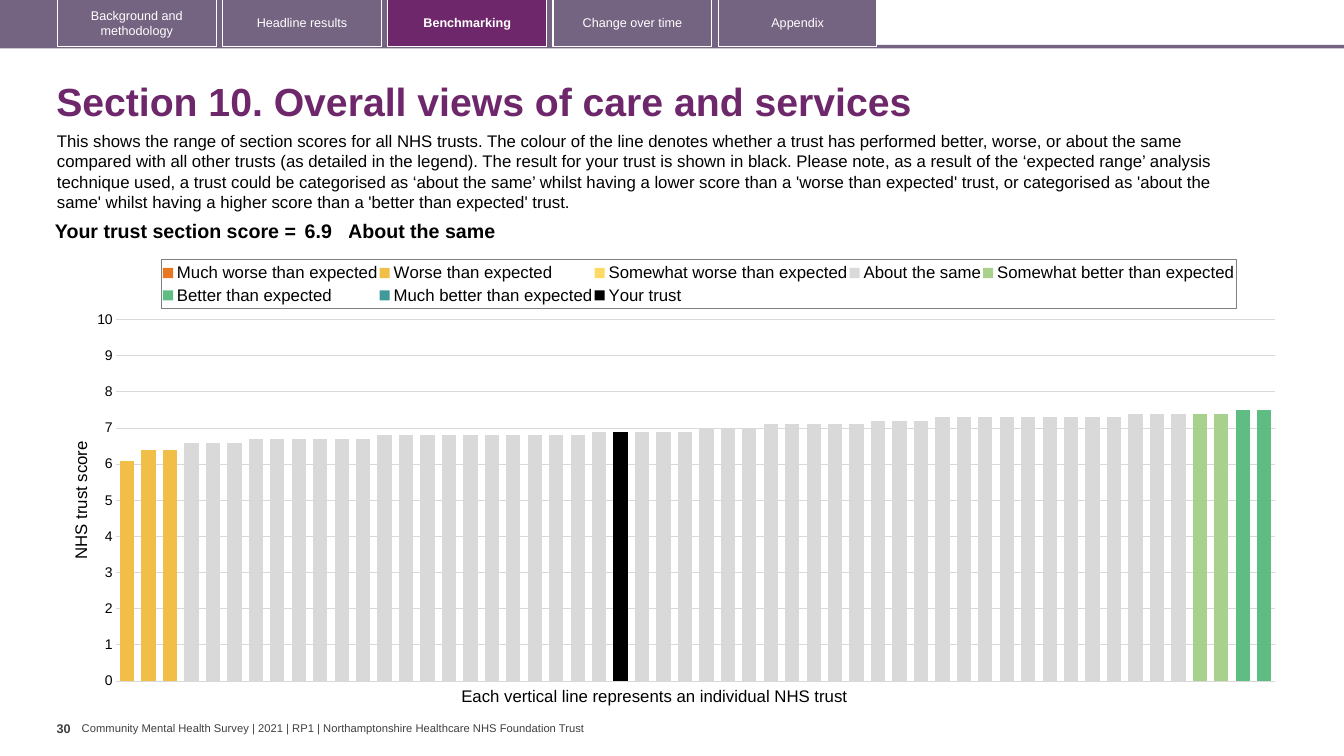
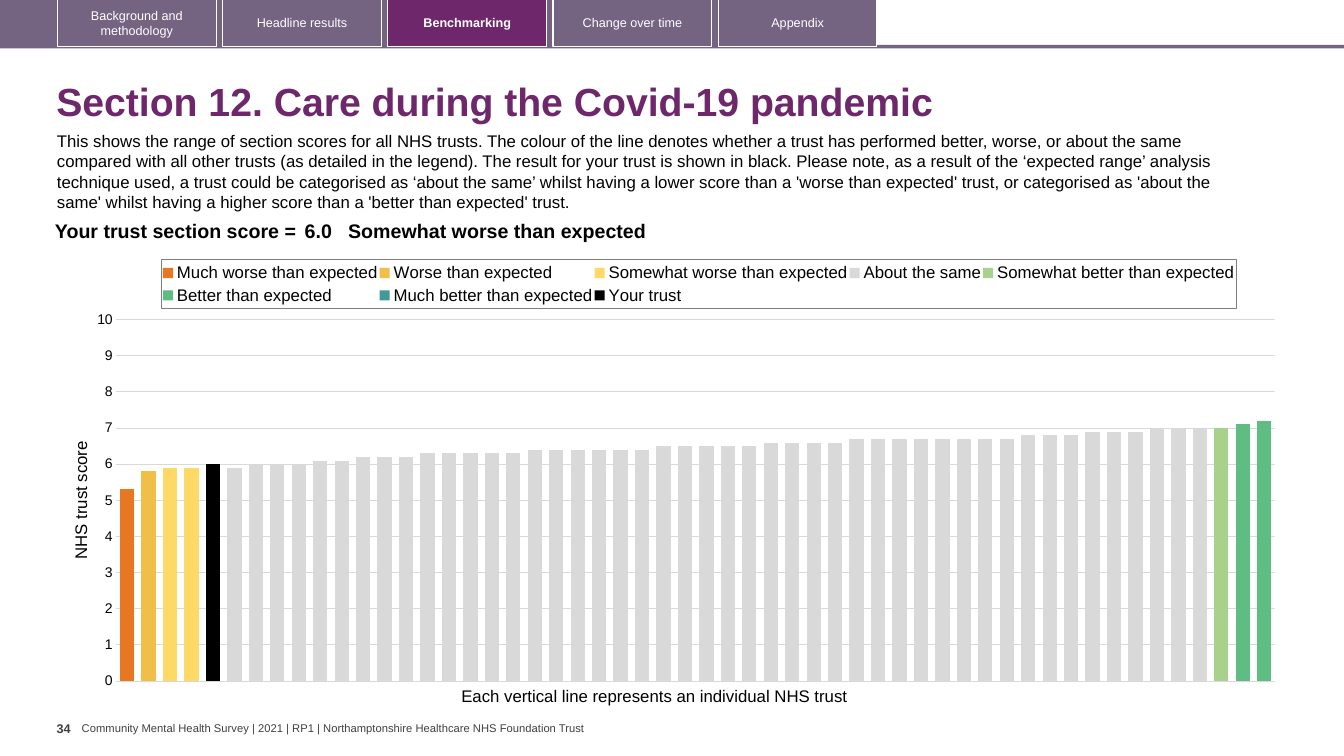
from copy import deepcopy
from dataclasses import dataclass
from itertools import chain

from lxml import etree
from pptx import Presentation
from pptx.chart.data import CategoryChartData
from pptx.dml.color import RGBColor
from pptx.enum.chart import XL_CHART_TYPE, XL_LEGEND_POSITION, XL_TICK_MARK
from pptx.enum.shapes import MSO_SHAPE
from pptx.enum.text import MSO_ANCHOR, PP_ALIGN
from pptx.oxml.ns import qn
from pptx.util import Pt

COLUMN = XL_CHART_TYPE.COLUMN_CLUSTERED
TOP_KEY = XL_LEGEND_POSITION.TOP
NO_TICK = XL_TICK_MARK.NONE
RECT = MSO_SHAPE.RECTANGLE
TOP, MIDDLE = MSO_ANCHOR.TOP, MSO_ANCHOR.MIDDLE
LEFT, CENTER, RIGHT = PP_ALIGN.LEFT, PP_ALIGN.CENTER, PP_ALIGN.RIGHT


@dataclass(frozen=True)
class Theme:
    face: str = "Arial"
    chart_face: str = "Calibri"
    band: str = "756382"
    accent: str = "6D276A"
    white: str = "FFFFFF"
    ink: str = "000000"
    muted: str = "404040"
    grid: str = "D9D9D9"
    frame: str = "7F7F7F"
    title: float = 28
    score: float = 14
    body: float = 12
    axis: float = 10
    small: float = 9
    foot: float = 8
    line: float = 0.75


@dataclass(frozen=True)
class Box:
    x: float
    y: float
    w: float
    h: float


@dataclass(frozen=True)
class Style:
    size: float
    color: str
    bold: bool = False
    align: PP_ALIGN = LEFT


@dataclass(frozen=True)
class Page:
    """One section; bands holds (score, count) runs for each band, worst first."""
    number: int
    title: str
    score: str
    verdict: str
    rank: int
    bands: tuple


T = Theme()
BANDS = (
    ("Much worse than expected", "E87722"),
    ("Worse than expected", "F1BE48"),
    ("Somewhat worse than expected", "FFD966"),
    ("About the same", "D9D9D9"),
    ("Somewhat better than expected", "A9D18E"),
    ("Better than expected", "5FBD83"),
    ("Much better than expected", "419999"),
)
TRUST = ("Your trust", T.ink)
COUNT = 54
TABS = ("Background and methodology", "Headline results", "Benchmarking",
        "Change over time", "Appendix")
ACTIVE = "Benchmarking"
FOOTER = ("Community Mental Health Survey | 2021 | RP1 | "
          "Northamptonshire Healthcare NHS Foundation Trust")
INTRO = (
    "This shows the range of section scores for all NHS trusts. The colour of the line "
    "denotes whether a trust has performed better, worse, or about the same compared with "
    "all other trusts (as detailed in the legend). The result for your trust is shown in "
    "black. Please note, as a result of the ‘expected range’ analysis technique used, a "
    "trust could be categorised as ‘about the same’ whilst having a lower score than a "
    "'worse than expected' trust, or categorised as 'about the same' whilst having a "
    "higher score than a 'better than expected' trust."
)
PAGES = (
    Page(30, "Section 10. Overall views of care and services", "6.9", "About the same", 24, (
        (),
        ((6.1, 1), (6.4, 2)),
        (),
        ((6.6, 3), (6.7, 6), (6.8, 10), (6.9, 5), (7, 3), (7.1, 5), (7.2, 3),
         (7.3, 9), (7.4, 3)),
        ((7.4, 2),),
        ((7.5, 2),),
        (),
    )),
    Page(34, "Section 12. Care during the Covid-19 pandemic", "6.0",
         "Somewhat worse than expected", 5, (
        ((5.3, 1),),
        ((5.8, 1),),
        ((5.9, 2), (6, 1)),
        ((5.9, 1), (6, 3), (6.1, 2), (6.2, 3), (6.3, 5), (6.4, 6), (6.5, 5),
         (6.6, 4), (6.7, 8), (6.8, 3), (6.9, 3), (7, 3)),
        ((7, 1),),
        ((7.1, 1), (7.2, 1)),
        (),
    )),
)


def rgb(code: str) -> RGBColor:
    return RGBColor.from_string(code)


def ink(font, size: float, color: str, bold: bool = False, face: str = T.face) -> None:
    font.name, font.size, font.bold = face, Pt(size), bold
    font.color.rgb = rgb(color)


def write(frame, text: str, style: Style) -> None:
    para = frame.paragraphs[0]
    para.text = text
    para.alignment = style.align
    ink(para.font, style.size, style.color, style.bold)


def span(box: Box) -> tuple:
    return Pt(box.x), Pt(box.y), Pt(box.w), Pt(box.h)


def label(slide, box: Box, text: str, style: Style, anchor: MSO_ANCHOR = TOP,
          pad: tuple = (7.2, 3.6)):
    frame = slide.shapes.add_textbox(*span(box)).text_frame
    frame.word_wrap = True
    frame.vertical_anchor = anchor
    frame.margin_left = frame.margin_right = Pt(pad[0])
    frame.margin_top = frame.margin_bottom = Pt(pad[1])
    write(frame, text, style)
    return frame


def block(slide, box: Box, fill: str = "", line: str = ""):
    shape = slide.shapes.add_shape(RECT, *span(box))
    shape.shadow.inherit = False
    if fill:
        shape.fill.solid()
        shape.fill.fore_color.rgb = rgb(fill)
    else:
        shape.fill.background()
    if line:
        shape.line.color.rgb = rgb(line)
        shape.line.width = Pt(T.line)
    else:
        shape.line.fill.background()
    return shape


def header(slide) -> None:
    block(slide, Box(-2, 32, 962, 2.6), T.band)
    block(slide, Box(-2, 0, 628.5, 33.6), T.band)
    for i, name in enumerate(TABS):
        live = name == ACTIVE
        tab = block(slide, Box(41 + 118 * i, -0.6, 113.4, 33.8),
                    T.accent if live else "", T.white)
        tab.text_frame.word_wrap = True
        tab.text_frame.vertical_anchor = MIDDLE
        write(tab.text_frame, name, Style(T.small, T.white, live, CENTER))


def footer(slide, number: int) -> None:
    label(slide, Box(40.5, 511.2, 18, 28.8), str(number),
          Style(T.small, T.muted, True), pad=(0, 3.6))
    label(slide, Box(58.4, 515.5, 380, 9.4), FOOTER, Style(T.foot, T.muted),
          MIDDLE, (0, 0))


def result(slide, page: Page) -> None:
    table = slide.shapes.add_table(1, 3, *span(Box(25.2, 155, 842, 22))).table
    table.first_row = table.horz_banding = False
    cells = (
        ("Your trust section score =", 189.5, RIGHT, 3),
        (page.score, 34, LEFT, 3),
        (page.verdict, 618.5, LEFT, 0),
    )
    for i, (text, width, align, side) in enumerate(cells):
        table.columns[i].width = Pt(width)
        cell = table.cell(0, i)
        cell.fill.background()
        cell.margin_left = cell.margin_right = Pt(side)
        cell.margin_top = cell.margin_bottom = Pt(3)
        write(cell.text_frame, text, Style(T.score, T.ink, True, align))


def scores(page: Page) -> CategoryChartData:
    """Place the bands one after another, then the trust at its rank."""
    data = CategoryChartData()
    data.categories = [str(n) for n in range(1, COUNT + 1)]
    start = 0
    for (name, _), runs in zip(BANDS, page.bands):
        vals = list(chain.from_iterable([score] * n for score, n in runs))
        end = start + len(vals)
        data.add_series(name, [None] * start + vals + [None] * (COUNT - end))
        start = end
    own = [None] * COUNT
    own[page.rank - 1] = float(page.score)
    data.add_series(TRUST[0], own)
    return data


def layout(x: float, y: float, w: float, h: float, inner: bool = False):
    """Build a manual layout from fractions of the chart."""
    root = etree.Element(qn("c:layout"))
    spot = etree.SubElement(root, qn("c:manualLayout"))
    pairs = [("layoutTarget", "inner")] if inner else []
    pairs += [("xMode", "edge"), ("yMode", "edge"), ("x", x), ("y", y), ("w", w), ("h", h)]
    for tag, val in pairs:
        etree.SubElement(spot, qn("c:" + tag), val=str(val))
    return root


def arrange(chart) -> None:
    """Fix the places of plot and legend, and frame the legend."""
    area = chart.element.find(".//" + qn("c:plotArea"))
    key = chart.element.find(".//" + qn("c:legend"))
    for part in (area, key):
        for old in part.findall(qn("c:layout")):
            part.remove(old)
    area.insert(0, layout(0.04, 0.158, 0.946, 0.808, True))
    key.find(qn("c:legendPos")).addnext(layout(0.0765, 0.024, 0.878, 0.11))
    shape = etree.Element(qn("c:spPr"))
    line = etree.SubElement(shape, qn("a:ln"), w=str(Pt(T.line)))
    fill = etree.SubElement(line, qn("a:solidFill"))
    etree.SubElement(fill, qn("a:srgbClr"), val=T.frame)
    key.find(qn("c:overlay")).addnext(shape)


def second(chart) -> None:
    """Move the last series to a second axis on the right."""
    area = chart.element.find(".//" + qn("c:plotArea"))
    bars = area.find(qn("c:barChart"))
    cat, val = area.find(qn("c:catAx")), area.find(qn("c:valAx"))
    extra, cat2, val2 = deepcopy(bars), deepcopy(cat), deepcopy(val)
    bars.remove(bars.findall(qn("c:ser"))[-1])
    for ser in extra.findall(qn("c:ser"))[:-1]:
        extra.remove(ser)
    ids = ("50010", "50020")
    for ref, code in zip(extra.findall(qn("c:axId")), ids):
        ref.set("val", code)
    for axis, own, other in ((cat2, *ids), (val2, *ids[::-1])):
        axis.find(qn("c:axId")).set("val", own)
        axis.find(qn("c:crossAx")).set("val", other)
    for tag in ("c:majorGridlines", "c:title"):
        val2.remove(val2.find(qn(tag)))
    for tag, choice in (("axPos", "r"), ("tickLblPos", "none"), ("crosses", "max")):
        val2.find(qn("c:" + tag)).set("val", choice)
    bars.addnext(extra)
    val.addnext(val2)
    val2.addnext(cat2)


def graph(slide, page: Page) -> None:
    box = Box(48.2, 177.8, 874.8, 319.7)
    chart = slide.shapes.add_chart(COLUMN, *span(box), scores(page)).chart
    chart.has_title = False
    ink(chart.font, T.axis, T.ink, face=T.chart_face)
    chart.has_legend = True
    chart.legend.position = TOP_KEY
    chart.legend.include_in_layout = False
    ink(chart.legend.font, T.body, T.ink)
    plot = chart.plots[0]
    plot.gap_width, plot.overlap, plot.vary_by_categories = 50, 100, False
    for ser, (_, color) in zip(plot.series, (*BANDS, TRUST)):
        ser.format.fill.solid()
        ser.format.fill.fore_color.rgb = rgb(color)
        ser.invert_if_negative = False
    chart.category_axis.visible = False
    axis = chart.value_axis
    axis.minimum_scale, axis.maximum_scale, axis.major_unit = 0, 10, 1
    axis.major_tick_mark = axis.minor_tick_mark = NO_TICK
    axis.format.line.fill.background()
    axis.major_gridlines.format.line.color.rgb = rgb(T.grid)
    axis.major_gridlines.format.line.width = Pt(T.line)
    ink(axis.tick_labels.font, T.axis, T.ink)
    write(axis.axis_title.text_frame, "NHS trust score", Style(T.body, T.ink))
    arrange(chart)
    second(chart)


def build(deck, page: Page) -> None:
    slide = deck.slides.add_slide(deck.slide_layouts[6])
    header(slide)
    title = label(slide, Box(33.1, 48.2, 899.3, 51.8), page.title,
                  Style(T.title, T.accent, True), MIDDLE)
    title.paragraphs[0].line_spacing = 0.9
    label(slide, Box(33.6, 90, 873.4, 65.5), INTRO, Style(T.body, T.ink))
    graph(slide, page)
    label(slide, Box(322.4, 486, 310, 21.6),
          "Each vertical line represents an individual NHS trust", Style(T.body, T.ink))
    result(slide, page)
    footer(slide, page.number)


def main() -> None:
    deck = Presentation()
    deck.slide_width, deck.slide_height = Pt(960), Pt(540)
    for page in PAGES:
        build(deck, page)
    deck.save("out.pptx")


if __name__ == "__main__":
    main()
